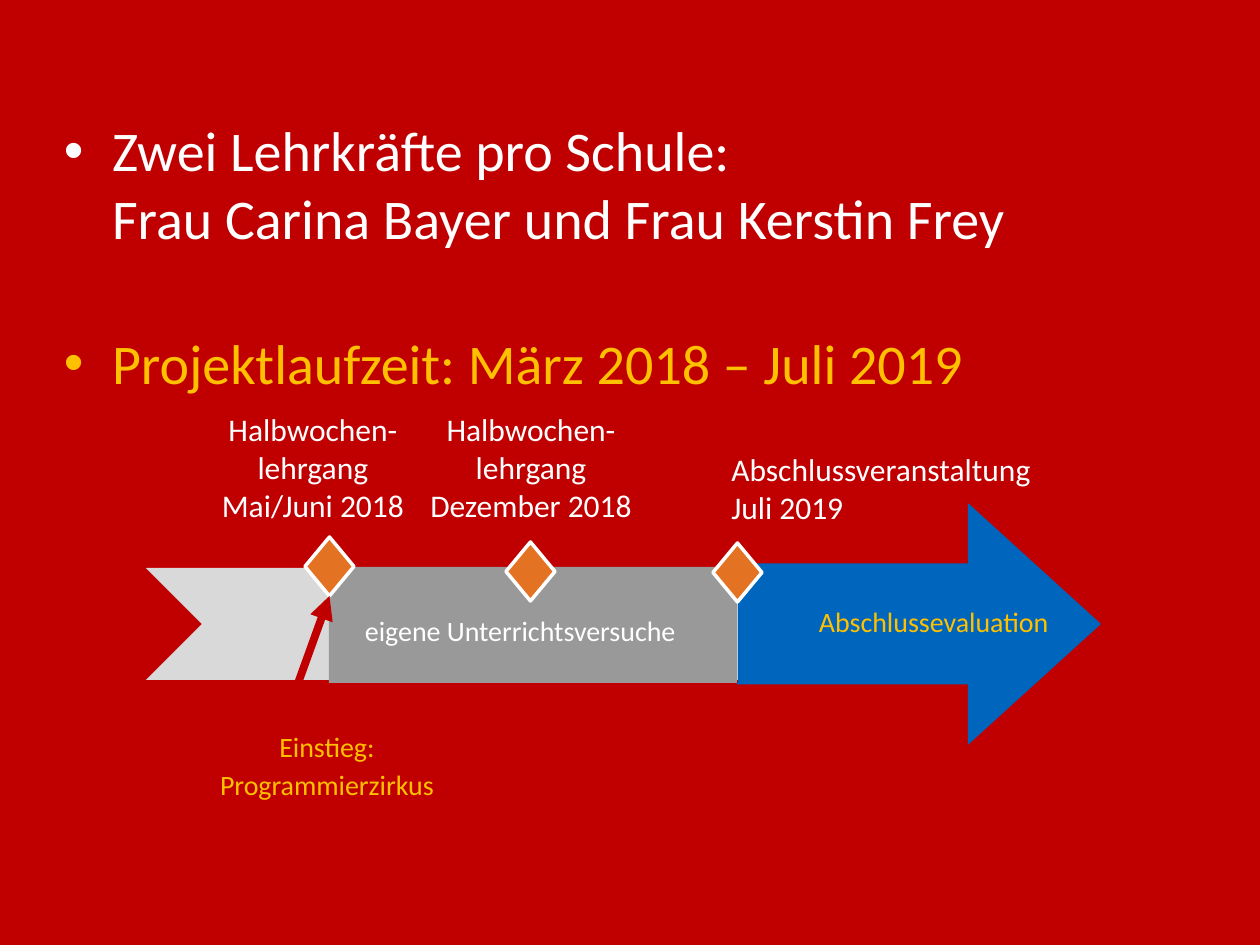
from lxml.etree import SubElement
from pptx import Presentation
from pptx.dml.color import RGBColor
from pptx.enum.shapes import MSO_CONNECTOR, MSO_SHAPE
from pptx.enum.text import PP_ALIGN
from pptx.oxml.ns import qn
from pptx.util import Emu, Pt

RED = RGBColor(0xC0, 0x00, 0x00)
WHITE = RGBColor(0xFF, 0xFF, 0xFF)
GOLD = RGBColor(0xFF, 0xC0, 0x00)
LIGHT_GREY = RGBColor(0xD9, 0xD9, 0xD9)
GREY = RGBColor(0x99, 0x99, 0x99)
BLUE = RGBColor(0x00, 0x65, 0xBD)
ORANGE = RGBColor(0xE3, 0x72, 0x22)

FONT = "Calibri"
PX_PER_INCH = 126
BULLET_INDENT = 48
DIAMOND_WIDTH, DIAMOND_HEIGHT = 49, 59


def px(length):
    return Emu(round(length * 914400 / PX_PER_INCH))


def set_font(paragraph, size, color):
    font = paragraph.font
    font.name, font.size = FONT, Pt(size)
    font.color.rgb = color


def add_frame(slide, box, margins=True):
    """Add a wrapping text box and return its text frame."""
    frame = slide.shapes.add_textbox(*map(px, box)).text_frame
    frame.word_wrap = True
    if not margins:
        frame.margin_left = frame.margin_right = 0
        frame.margin_top = frame.margin_bottom = 0
    return frame


def add_label(slide, box, lines, size, color, align=PP_ALIGN.LEFT,
              spacing=None, margins=True):
    frame = add_frame(slide, box, margins)
    frame.text = "\n".join(lines)
    for paragraph in frame.paragraphs:
        paragraph.alignment = align
        paragraph.line_spacing = spacing
        set_font(paragraph, size, color)


def add_phase_label(slide, box, lines, color, align=PP_ALIGN.LEFT):
    add_label(slide, box, lines, 16, color, align, spacing=1.14, margins=False)


def add_bullets(slide, box, items):
    """Fill a box with bullets given as (text, color, line spacing)."""
    frame = add_frame(slide, box, margins=False)
    for index, (text, color, spacing) in enumerate(items):
        paragraph = frame.add_paragraph() if index else frame.paragraphs[0]
        paragraph.text = text
        properties = paragraph._p.get_or_add_pPr()
        properties.set("marL", str(px(BULLET_INDENT)))
        properties.set("indent", str(-px(BULLET_INDENT)))
        SubElement(properties, qn("a:buFont"), typeface="Arial")
        SubElement(properties, qn("a:buChar"), char="•")
        paragraph.line_spacing = spacing
        if index:
            paragraph.space_before = Pt(6.4)
        set_font(paragraph, 32, color)


def add_block(slide, kind, box, color):
    block = slide.shapes.add_shape(kind, *map(px, box))
    block.shadow.inherit = False
    block.fill.solid()
    block.fill.fore_color.rgb = color
    block.line.fill.background()
    return block


def add_milestone(slide, left, top):
    box = (left, top, DIAMOND_WIDTH, DIAMOND_HEIGHT)
    milestone = add_block(slide, MSO_SHAPE.DIAMOND, box, ORANGE)
    milestone.line.color.rgb = WHITE
    milestone.line.width = Pt(2)
    return milestone


def add_pointer(slide, start, milestone):
    """Draw an arrow from a point to the bottom of a milestone."""
    x, y = map(px, start)
    pointer = slide.shapes.add_connector(MSO_CONNECTOR.STRAIGHT, x, y, x, y)
    pointer.end_connect(milestone, 2)
    pointer.line.color.rgb = RED
    pointer.line.width = Pt(4.5)
    SubElement(pointer.line._get_or_add_ln(), qn("a:tailEnd"), type="triangle")
    SubElement(pointer._element.spPr, qn("a:effectLst"))


def add_timeline(slide):
    evaluation = add_block(slide, MSO_SHAPE.NOTCHED_RIGHT_ARROW,
                           (736, 503, 365, 242), BLUE)
    evaluation.adjustments[1] = 0.55
    add_block(slide, MSO_SHAPE.RECTANGLE, (329, 567, 408, 116), GREY)
    add_block(slide, MSO_SHAPE.RECTANGLE, (738, 566, 81, 117), BLUE)
    add_phase_label(slide, (819, 600, 253, 37), ["Abschlussevaluation"], GOLD)
    add_phase_label(slide, (365, 609, 316, 39),
                    ["eigene Unterrichtsversuche"], WHITE)
    add_phase_label(slide, (193, 725, 268, 77),
                    ["Einstieg:", "Programmierzirkus"], GOLD, PP_ALIGN.CENTER)

    first_course, *_ = [add_milestone(slide, left, top) for left, top in
                        ((305, 537), (506, 542), (713, 543))]
    add_pointer(slide, (296, 689), first_course)

    for left, width, date in ((192, 242, "Mai/Juni 2018"),
                              (413, 236, "Dezember 2018")):
        add_label(slide, (left, 404, width, 127),
                  ["Halbwochen-lehrgang", date], 18, WHITE, PP_ALIGN.CENTER)
    add_label(slide, (719, 444, 340, 89),
              ["Abschlussveranstaltung", "Juli 2019"], 18, WHITE)


def main():
    deck = Presentation()
    deck.slide_width, deck.slide_height = px(1260), px(945)
    slide = deck.slides.add_slide(deck.slide_layouts[6])
    slide.background.fill.solid()
    slide.background.fill.fore_color.rgb = RED

    add_block(slide, MSO_SHAPE.NOTCHED_RIGHT_ARROW,
              (146, 512, 942, 224), LIGHT_GREY)
    add_bullets(slide, (64, 116, 1142, 746), [
        ("Zwei Lehrkräfte pro Schule:\vFrau Carina Bayer und Frau Kerstin Frey",
         WHITE, 1.0),
        ("Projektlaufzeit: März 2018 – Juli 2019", GOLD, 2.0),
    ])
    add_timeline(slide)
    deck.save("out.pptx")


if __name__ == "__main__":
    main()
